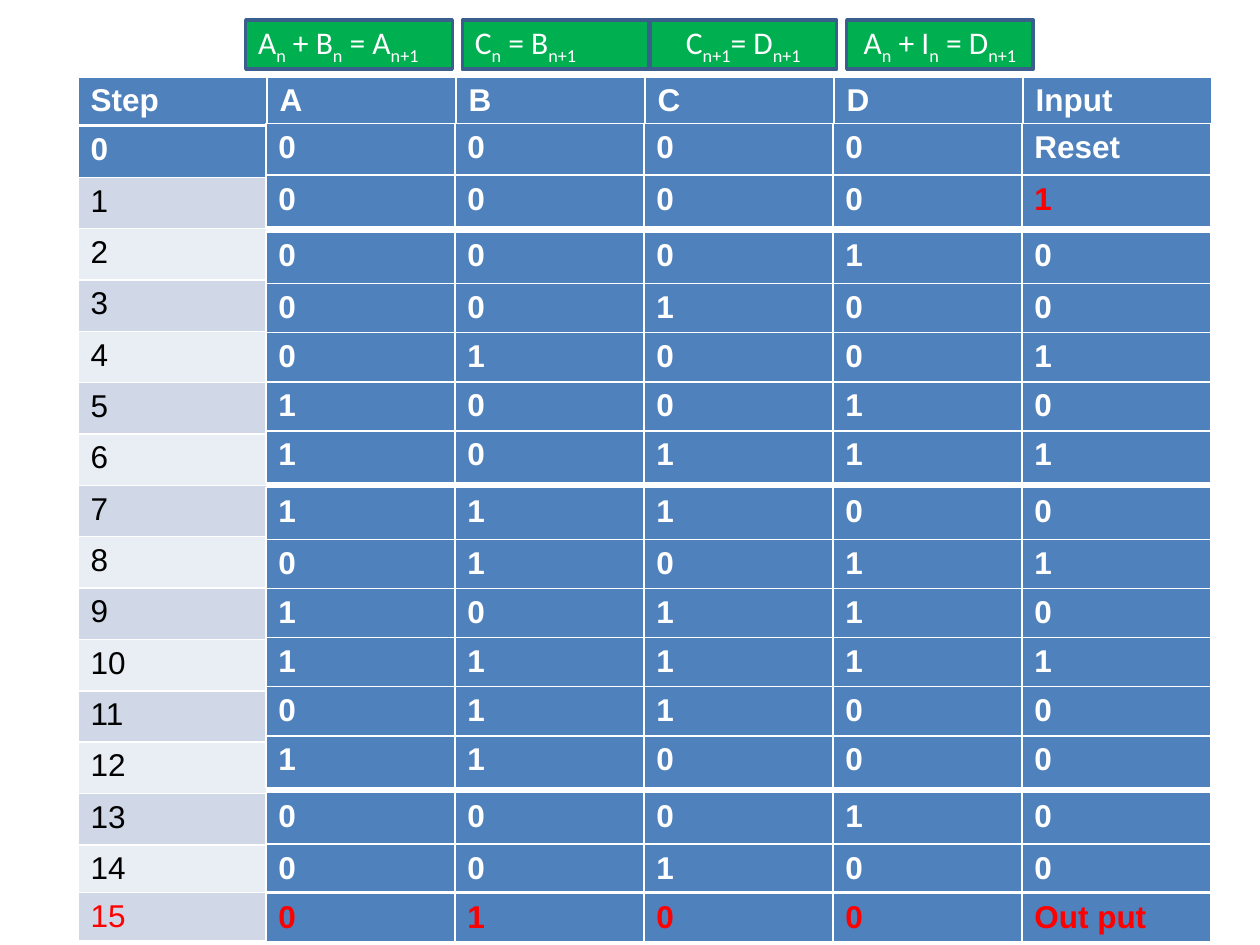
from itertools import cycle

from pptx import Presentation
from pptx.dml.color import RGBColor
from pptx.enum import shapes, text
from pptx.util import Inches, Pt

WHITE = RGBColor(0xFF, 0xFF, 0xFF)
BLACK = RGBColor(0x00, 0x00, 0x00)
RED = RGBColor(0xFF, 0x00, 0x00)
BLUE = RGBColor(0x4F, 0x81, 0xBD)
BAND_DARK = RGBColor(0xD0, 0xD8, 0xE8)
BAND_LIGHT = RGBColor(0xE9, 0xED, 0xF4)
GREEN = RGBColor(0x00, 0xB0, 0x50)
NAVY = RGBColor(0x3A, 0x5F, 0x8C)

COLUMN = Inches(1.5)
ROW = Inches(0.41)
SHORT_ROW = Inches(0.38)

HEADINGS = ["Step", "A", "B", "C", "D", "Input"]
# Each group of states: its top in inches and its rows (A, B, C, D, Input)
STATE_GROUPS = [
    (0.98, ["0 0 0 0 Reset", "0 0 0 0 1"]),
    (1.84, ["0 0 0 1 0", "0 0 1 0 0", "0 1 0 0 1", "1 0 0 1 0", "1 0 1 1 1"]),
    (3.87, ["1 1 1 0 0", "0 1 0 1 1", "1 0 1 1 0", "1 1 1 1 1", "0 1 1 0 0",
            "1 1 0 0 0"]),
    (6.29, ["0 0 0 1 0", "0 0 1 0 0"]),
]
FINAL_STATE = ["0", "1", "0", "0", "Out put"]
# Bars separate normal text from subscripts, starting with normal text
EQUATIONS = [
    (6.72, 1.48, "A|n| + I|n| = D|n+1", text.PP_ALIGN.CENTER),
    (5.16, 1.48, "C|n+1|= D|n+1", text.PP_ALIGN.CENTER),
    (3.67, 1.48, "C|n| = B|n+1", text.PP_ALIGN.LEFT),
    (1.95, 1.64, "A|n| + B|n| = A|n+1", text.PP_ALIGN.LEFT),
]


def fill_cell(cell, value, fill, color=WHITE, bold=True):
    cell.fill.solid()
    cell.fill.fore_color.rgb = fill
    cell.text = value
    font = cell.text_frame.paragraphs[0].font
    font.name, font.size, font.bold = "Arial", Pt(18), bold
    font.color.rgb = color


def add_row_table(slide, left, top, height, values, colors=None):
    """Add a blue one-row table; colors maps a value to its font colour."""
    table = slide.shapes.add_table(1, len(values), left, top,
                                   COLUMN * len(values), height).table
    for cell, value in zip(table.rows[0].cells, values):
        fill_cell(cell, value, BLUE, (colors or {}).get(value, WHITE))


def add_steps(slide, left, top):
    heights = [Inches(5.71 / 14)] * 14 + [SHORT_ROW] * 2
    table = slide.shapes.add_table(len(heights), 1, left, top,
                                   COLUMN, sum(heights)).table
    for row, height in zip(table.rows, heights):
        row.height = height
    fill_cell(table.cell(0, 0), "0", BLUE)
    last = len(heights) - 1
    for step, band in zip(range(1, last + 1), cycle([BAND_DARK, BAND_LIGHT])):
        fill_cell(table.cell(step, 0), str(step), band,
                  RED if step == last else BLACK, bold=False)


def add_states(slide, left):
    for group_top, states in STATE_GROUPS:
        for index, state in enumerate(states):
            top = group_top + 0.39 * index + (0.02 if index else 0)
            last = group_top == 6.29 and index == 1
            colors = {"1": RED} if state == "0 0 0 0 1" else None
            add_row_table(slide, left, Inches(top), SHORT_ROW if last else ROW,
                          state.split(), colors)
    add_row_table(slide, left, Inches(7.09), SHORT_ROW, FINAL_STATE,
                  dict.fromkeys(FINAL_STATE, RED))


def add_equation(slide, left, top, width, height, equation, alignment):
    box = slide.shapes.add_shape(shapes.MSO_SHAPE.RECTANGLE, left, top, width, height)
    box.shadow.inherit = False
    box.fill.solid()
    box.fill.fore_color.rgb = GREEN
    box.line.color.rgb = NAVY
    box.line.width = Pt(2)
    box.text_frame.vertical_anchor = text.MSO_ANCHOR.MIDDLE
    paragraph = box.text_frame.paragraphs[0]
    paragraph.alignment = alignment
    font = paragraph.font
    font.name, font.size = "Calibri", Pt(18)
    font.color.rgb = WHITE
    for index, part in enumerate(equation.split("|")):
        run = paragraph.add_run()
        run.text = part
        if index % 2:
            run._r.get_or_add_rPr().set("baseline", "-25000")


def main():
    deck = Presentation()
    deck.slide_width, deck.slide_height = Inches(10), Inches(7.5)
    slide = deck.slides.add_slide(deck.slide_layouts[6])
    add_row_table(slide, Inches(0.62), Inches(0.61), SHORT_ROW, HEADINGS)
    add_steps(slide, Inches(0.62), Inches(1))
    add_states(slide, Inches(2.11))
    for left, width, equation, alignment in EQUATIONS:
        add_equation(slide, Inches(left), Inches(0.16), Inches(width),
                     Inches(0.39), equation, alignment)
    deck.save("out.pptx")


if __name__ == "__main__":
    main()
